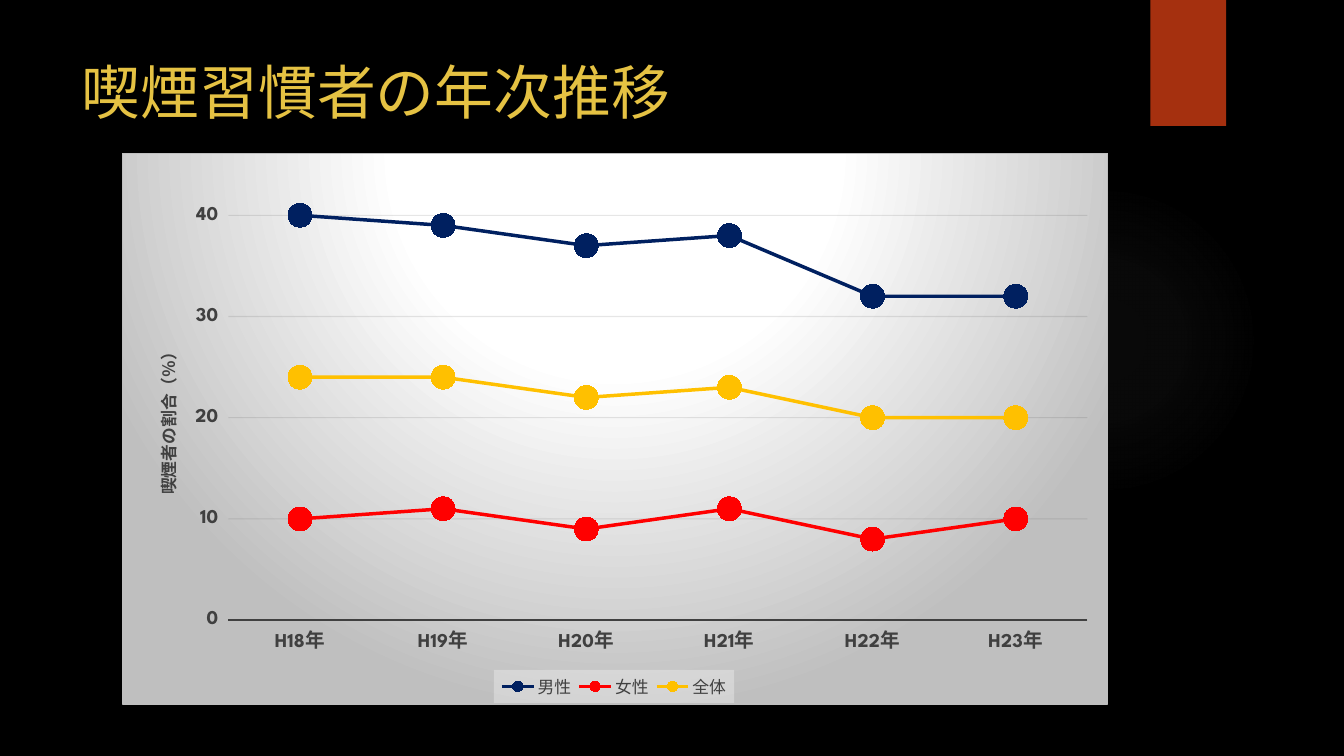
import pptx
import pptx.chart.data
import pptx.dml.color
import pptx.enum.chart
import pptx.enum.shapes
import pptx.enum.text
import pptx.oxml
import pptx.oxml.ns
import pptx.util

# Content
TITLE = "喫煙習慣者の年次推移"
AXIS_TITLE = "喫煙者の割合（％）"
YEARS = [f"H{year}年" for year in range(18, 24)]
SMOKERS = {
    "男性": (40, 39, 37, 38, 32, 32),
    "女性": (10, 11, 9, 11, 8, 10),
    "全体": (24, 24, 22, 23, 20, 20),
}
THEME = {
    "font": "League Spartan",
    "background": "000000", "title": "E5C243", "ribbon": "A5300F",
    "text": "404040", "grid": "0D0D0D", "border": "BFBFBF", "legend": "F2F2F2",
    "series": ("002060", "FF0000", "FFC000"),
    "title_size": 42, "axis_size": 14, "label_size": 12, "base_size": 10,
}
GLOW = [(0, "848484", 7), (36, "848484", 6), (69, "848484", 0)]
PANEL = [(0, "FFFFFF", 100), (39, "FFFFFF", 100), (100, "BFBFBF", 100)]

# Places as shares of the slide: left, top, width, height
WIDTH, HEIGHT = 13.33, 7.5
PLACES = {
    "glow": (0.706, 0.244, 0.231, 0.411),
    "ribbon": (0.856, 0, 0.0563, 0.1667),
    "title": (0.0533, 0.0667, 0.772, 0.204),
    "chart": (0.0908, 0.2027, 0.7337, 0.7293),
}
# Places as shares of the chart
PLOT = (0.1075, 0.02, 0.872, 0.8276)
LEGEND = (0.377, 0.938, 0.244, 0.06)
AXIS_TITLE_PLACE = (0.028, 0.34)

NAMESPACES = pptx.oxml.ns.nsdecls("a", "c")
qn = pptx.oxml.ns.qn


def box(name):
    return [pptx.util.Inches(share * side)
            for share, side in zip(PLACES[name], (WIDTH, HEIGHT) * 2)]


def rgb(value):
    return pptx.dml.color.RGBColor.from_string(value)


def style_font(font, size, color, bold=False):
    formats = {"name": THEME["font"], "size": pptx.util.Pt(size), "bold": bold}
    for attribute, value in formats.items():
        setattr(font, attribute, value)
    font.color.rgb = rgb(color)


def color_xml(color, alpha):
    return f'<a:srgbClr val="{color}"><a:alpha val="{alpha * 1000}"/></a:srgbClr>'


def radial_xml(stops, top, bottom):
    stop_xml = "".join(f'<a:gs pos="{position * 1000}">{color_xml(color, alpha)}</a:gs>'
                       for position, color, alpha in stops)
    return (f'<a:gradFill {NAMESPACES} rotWithShape="1"><a:gsLst>{stop_xml}</a:gsLst>'
            f'<a:path path="circle"><a:fillToRect l="50000" t="{top * 1000}" '
            f'r="50000" b="{bottom * 1000}"/></a:path></a:gradFill>')


def place_in_chart(element, shares, inner=False):
    for layout in element.findall(qn("c:layout")):
        element.remove(layout)
    target = '<c:layoutTarget val="inner"/>' if inner else ""
    modes = "".join(f'<c:{axis}Mode val="edge"/>' for axis in "xy")
    sizes = "".join(f'<c:{key} val="{share}"/>' for key, share in zip("xywh", shares))
    layout = pptx.oxml.parse_xml(f"<c:layout {NAMESPACES}><c:manualLayout>{target}{modes}"
                                 f"{sizes}</c:manualLayout></c:layout>")
    if inner:
        element.insert(0, layout)
    else:
        element.find(qn("c:overlay")).addprevious(layout)


def add_format(element, content):
    """Put shape properties ahead of the text properties of a chart part."""
    element.find(qn("c:txPr")).addprevious(
        pptx.oxml.parse_xml(f"<c:spPr {NAMESPACES}>{content}</c:spPr>"))


def add_decoration(slide, name, kind):
    shape = slide.shapes.add_shape(kind, *box(name))
    shape.shadow.inherit = False
    shape.line.fill.background()
    return shape


def add_title(slide):
    title = slide.shapes.title
    slide.shapes.element.append(title.element)
    for side, value in zip(("left", "top", "width", "height"), box("title")):
        setattr(title, side, value)
    frame = title.text_frame
    frame.text = TITLE
    frame.word_wrap = True
    frame.auto_size = pptx.enum.text.MSO_AUTO_SIZE.NONE
    frame.vertical_anchor = pptx.enum.text.MSO_ANCHOR.TOP
    frame.paragraphs[0].alignment = pptx.enum.text.PP_ALIGN.LEFT
    style_font(frame.paragraphs[0].runs[0].font, THEME["title_size"], THEME["title"])


def style_axes(chart):
    marks = pptx.enum.chart.XL_TICK_MARK
    years, rates = chart.category_axis, chart.value_axis
    for axis in (years, rates):
        style_font(axis.tick_labels.font, THEME["axis_size"], THEME["text"], True)
        axis.minor_tick_mark = marks.NONE
    years.major_tick_mark = marks.NONE
    years.format.line.color.rgb = rgb(THEME["text"])
    years.format.line.width = pptx.util.Pt(1.5)

    scale = {"minimum_scale": 0, "maximum_scale": 45, "major_unit": 10,
             "has_major_gridlines": True, "major_tick_mark": marks.OUTSIDE}
    for attribute, value in scale.items():
        setattr(rates, attribute, value)
    rates.format.line.fill.background()
    grid = rates.major_gridlines.format.line
    grid.color.rgb = rgb(THEME["grid"])
    grid.width = pptx.util.Pt(0.75)
    grid_color = rates.major_gridlines._xAx.find(".//" + qn("c:majorGridlines")).find(
        ".//" + qn("a:srgbClr"))
    grid_color.append(pptx.oxml.parse_xml(f'<a:alpha {NAMESPACES} val="10000"/>'))

    frame = rates.axis_title.text_frame
    frame.text = AXIS_TITLE
    style_font(frame.paragraphs[0].runs[0].font, THEME["label_size"], THEME["text"], True)
    title = rates._element.find(qn("c:title"))
    body = title.find(".//" + qn("a:bodyPr"))
    body.set("rot", "-5400000")
    body.set("vert", "horz")
    place_in_chart(title, AXIS_TITLE_PLACE)


def add_smoking_chart(slide):
    data = pptx.chart.data.CategoryChartData(number_format="General")
    data.categories = YEARS
    for name, values in SMOKERS.items():
        data.add_series(name, values)
    chart = slide.shapes.add_chart(
        pptx.enum.chart.XL_CHART_TYPE.LINE_MARKERS, *box("chart"), data).chart
    chart.has_title = False
    style_font(chart.font, THEME["base_size"], "FFFFFF")
    style_axes(chart)

    # Lines and round markers
    chart.plots[0].vary_by_categories = False
    for series, color in zip(chart.plots[0].series, THEME["series"]):
        series.smooth = False
        series.format.line.color.rgb = rgb(color)
        series.format.line.width = pptx.util.Pt(2.5)
        series.marker.style = pptx.enum.chart.XL_MARKER_STYLE.CIRCLE
        series.marker.size = 17
        series.marker.format.fill.solid()
        series.marker.format.fill.fore_color.rgb = rgb(color)
        series.marker.format.line.color.rgb = rgb(color)

    # Legend
    chart.has_legend = True
    legend = chart.legend
    legend.position = pptx.enum.chart.XL_LEGEND_POSITION.BOTTOM
    legend.include_in_layout = False
    style_font(legend.font, THEME["label_size"], THEME["text"])
    add_format(legend._element, f"<a:solidFill>{color_xml(THEME['legend'], 39)}</a:solidFill>")
    place_in_chart(legend._element, LEGEND)

    # Panel behind the plot
    space = chart._chartSpace
    place_in_chart(space.find(".//" + qn("c:plotArea")), PLOT, inner=True)
    add_format(space, radial_xml(PANEL, -80, 180) + '<a:ln w="9525"><a:solidFill>'
               f"{color_xml(THEME['border'], 100)}</a:solidFill></a:ln>")
    if space.find(qn("c:roundedCorners")) is None:
        space.find(qn("c:date1904")).addnext(
            pptx.oxml.parse_xml(f'<c:roundedCorners {NAMESPACES} val="0"/>'))


def main():
    presentation = pptx.Presentation()
    presentation.slide_width = pptx.util.Inches(WIDTH)
    presentation.slide_height = pptx.util.Inches(HEIGHT)
    slide = presentation.slides.add_slide(presentation.slide_layouts[5])
    slide.background.fill.solid()
    slide.background.fill.fore_color.rgb = rgb(THEME["background"])

    # Decoration
    kinds = pptx.enum.shapes.MSO_SHAPE
    glow = add_decoration(slide, "glow", kinds.OVAL)
    glow.element.spPr.find(qn("a:prstGeom")).addnext(
        pptx.oxml.parse_xml(radial_xml(GLOW, 50, 50)))
    ribbon = add_decoration(slide, "ribbon", kinds.RECTANGLE)
    ribbon.fill.solid()
    ribbon.fill.fore_color.rgb = rgb(THEME["ribbon"])

    add_title(slide)
    add_smoking_chart(slide)
    presentation.save("out.pptx")


if __name__ == "__main__":
    main()
